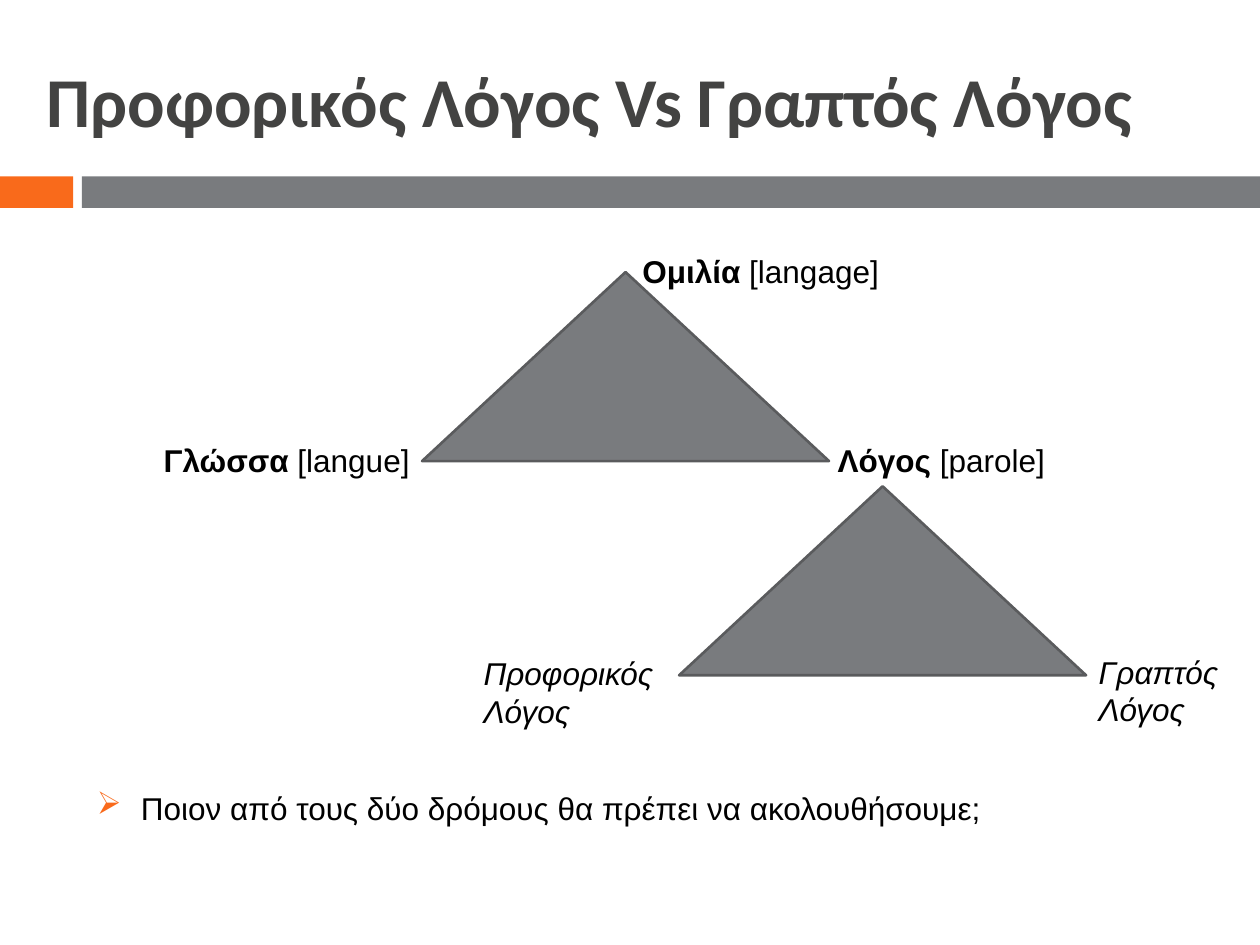
from dataclasses import dataclass

from lxml.etree import SubElement
from pptx import Presentation
from pptx.dml.color import RGBColor
from pptx.enum.shapes import MSO_SHAPE
from pptx.enum.text import MSO_ANCHOR
from pptx.oxml.ns import qn
from pptx.util import Inches, Pt

COLUMNS, ROWS = 100, 75
SLIDE_WIDTH, SLIDE_HEIGHT = Inches(10), Inches(7.5)


@dataclass(frozen=True)
class Theme:
    accent: RGBColor = RGBColor.from_string("F96A1B")
    gray: RGBColor = RGBColor.from_string("797B7E")
    outline: RGBColor = RGBColor.from_string("5A5B5D")
    heading: RGBColor = RGBColor.from_string("434342")
    body: RGBColor = RGBColor.from_string("000000")
    heading_font: str = "Calibri"
    body_font: str = "Arial"
    heading_size: Pt = Pt(40)
    body_size: Pt = Pt(18)
    outline_width: Pt = Pt(1.5)


@dataclass(frozen=True)
class Box:
    left: float
    top: float
    width: float
    height: float

    def offset(self, left, top, width, height):
        return Box(self.left + left, self.top + top, width, height)

    def lengths(self):
        column, row = SLIDE_WIDTH / COLUMNS, SLIDE_HEIGHT / ROWS
        return (round(self.left * column), round(self.top * row),
                round(self.width * column), round(self.height * row))


THEME = Theme()


def add_figure(slide, kind, box, fill, outline=None):
    shape = slide.shapes.add_shape(kind, *box.lengths())
    shape.shadow.inherit = False
    shape.fill.solid()
    shape.fill.fore_color.rgb = fill
    if outline is None:
        shape.line.fill.background()
    else:
        shape.line.color.rgb = outline
        shape.line.width = THEME.outline_width


def add_text(slide, box, lines, wrap=True, name=THEME.body_font,
             size=THEME.body_size, color=THEME.body):
    text_frame = slide.shapes.add_textbox(*box.lengths()).text_frame
    text_frame.word_wrap = wrap
    for index, line in enumerate(lines):
        paragraph = text_frame.paragraphs[0] if index == 0 else text_frame.add_paragraph()
        for text, style in line:
            run = paragraph.add_run()
            run.text = text
            run.font.name = name
            run.font.size = size
            run.font.color.rgb = color
            run.font.bold = style == "bold"
            run.font.italic = style == "italic"
    return text_frame


def add_title(slide, box, text):
    text_frame = add_text(slide, box, [[(text, "bold")]], name=THEME.heading_font,
                          size=THEME.heading_size, color=THEME.heading)
    text_frame.vertical_anchor = MSO_ANCHOR.MIDDLE


def add_band(slide, box):
    accent_width, gap = 5.8, 0.7
    start = accent_width + gap
    add_figure(slide, MSO_SHAPE.RECTANGLE,
               box.offset(0, 0, accent_width, box.height), THEME.accent)
    add_figure(slide, MSO_SHAPE.RECTANGLE,
               box.offset(start, 0, box.width - start, box.height), THEME.gray)


def add_triangle(slide, box):
    add_figure(slide, MSO_SHAPE.ISOSCELES_TRIANGLE, box, THEME.gray, THEME.outline)


def add_speech_triangle(slide, box):
    add_triangle(slide, box)
    add_text(slide, box.offset(16.5, -2.1, 21, 4),
             [[("Ομιλία", "bold"), (" [langage]", "plain")]], wrap=False)
    add_text(slide, box.offset(-21.5, 12.9, 21.8, 4),
             [[("Γλώσσα", "bold"), (" [langue]", "plain")]], wrap=False)
    add_text(slide, box.offset(box.width - 0.3, 12.9, 20.5, 4),
             [[("Λόγος ", "bold"), ("[parole]", "plain")]])


def add_parole_triangle(slide, box):
    add_triangle(slide, box)
    add_text(slide, box.offset(-16.5, 12.8, 17.3, 7.1), [[("Προφορικός Λόγος", "italic")]])
    add_text(slide, box.offset(box.width, 12.7, 13.8, 7.1),
             [[("Γραπτός", "italic")], [("Λόγος", "italic")]])


def add_question(slide, box, text):
    paragraph = add_text(slide, box, [[(text, "plain")]]).paragraphs[0]
    properties = paragraph._p.get_or_add_pPr()
    indent = Inches(0.35)
    properties.set("marL", str(indent))
    properties.set("indent", str(-indent))
    bullet_color = SubElement(properties, qn("a:buClr"))
    SubElement(bullet_color, qn("a:srgbClr"), val=str(THEME.accent))
    SubElement(properties, qn("a:buChar"), char="➢")


def main():
    presentation = Presentation()
    presentation.slide_width, presentation.slide_height = SLIDE_WIDTH, SLIDE_HEIGHT
    slide = presentation.slides.add_slide(presentation.slide_layouts[6])
    add_band(slide, Box(0, 14, COLUMNS, 2.5))
    add_title(slide, Box(2.7, 2.5, 96.1, 10.8), "Προφορικός Λόγος Vs Γραπτός Λόγος")
    speech = Box(33.5, 21.6, 32.3, 15)
    add_speech_triangle(slide, speech)
    add_parole_triangle(slide, speech.offset(20.4, 17, speech.width, speech.height))
    add_question(slide, Box(6.7, 62.1, 80.3, 4),
                 "Ποιον από τους δύο δρόμους θα πρέπει να ακολουθήσουμε;")
    presentation.save("out.pptx")


if __name__ == "__main__":
    main()
